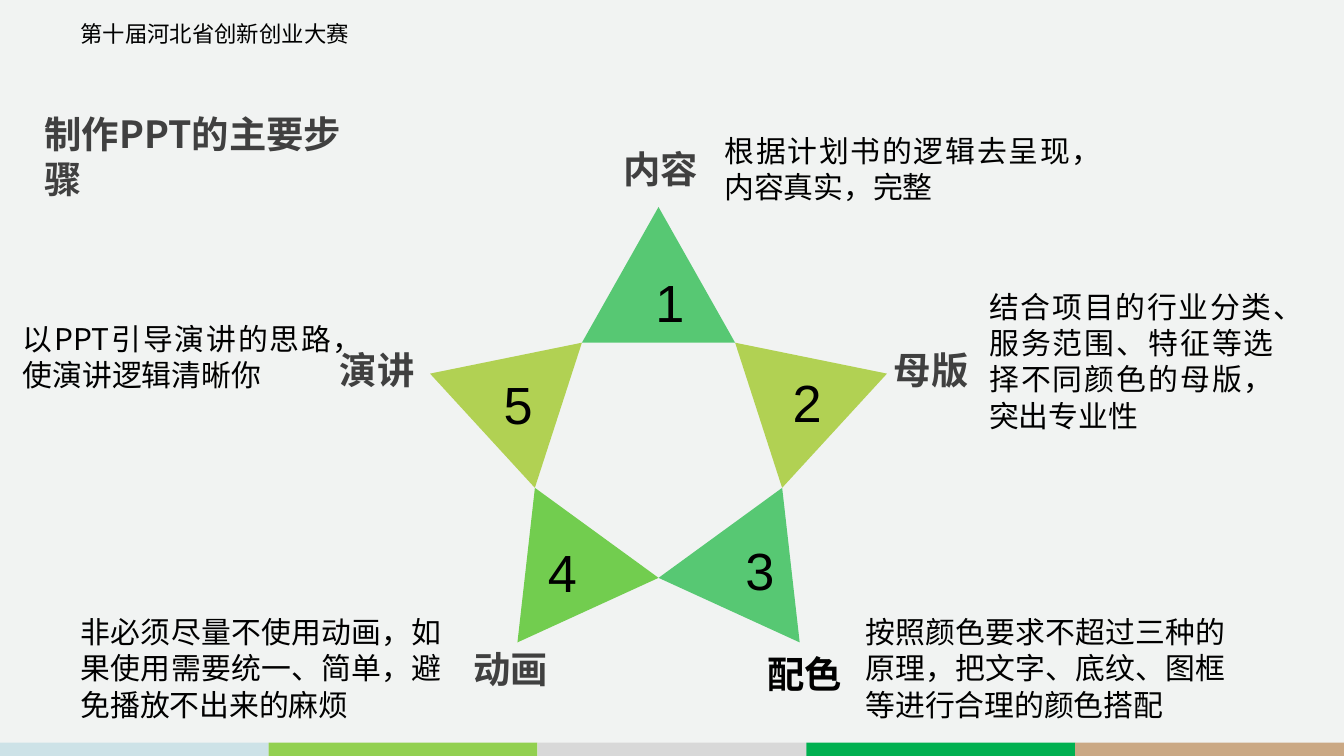
"""Build a slide on the five main steps of making a presentation, set around a star."""
from math import cos, pi, sin

from lxml import etree
from pptx import Presentation
from pptx.dml.color import RGBColor
from pptx.enum.shapes import MSO_SHAPE
from pptx.enum.text import MSO_ANCHOR, PP_ALIGN
from pptx.oxml.ns import qn
from pptx.util import Inches, Pt

RECT = MSO_SHAPE.RECTANGLE
TOP = MSO_ANCHOR.TOP
LEFT, CENTER, JUSTIFY = PP_ALIGN.LEFT, PP_ALIGN.CENTER, PP_ALIGN.JUSTIFY

BACKGROUND = RGBColor(0xF1, 0xF3, 0xF2)
BLACK = RGBColor(0, 0, 0)
GRAY = RGBColor(0x40, 0x40, 0x40)
TEAL = RGBColor(0x57, 0xC8, 0x73)
LIME = RGBColor(0xB1, 0xD1, 0x53)
GREEN = RGBColor(0x72, 0xCD, 0x4F)
BAR_COLORS = [
    RGBColor(0xCD, 0xE2, 0xE7),
    RGBColor(0x92, 0xD0, 0x50),
    RGBColor(0xD8, 0xD8, 0xD8),
    RGBColor(0x00, 0xB0, 0x50),
    RGBColor(0xCA, 0xA8, 0x84),
]
CJK = "Noto Sans CJK SC"

HEADER = "第十届河北省创新创业大赛"
TITLE = "制作PPT的主要步骤"
STEPS = [
    dict(color=TEAL, number=(4.6, 2, 0.77, 0.47),
         label="内容", label_box=(4.64, 1.08, 0.69, 0.34), label_color=GRAY,
         text="根据计划书的逻辑去呈现，内容真实，完整",
         text_box=(5.39, 0.98, 2.81, 0.54)),
    dict(color=LIME, number=(5.68, 2.75, 0.65, 0.47),
         label="母版", label_box=(6.65, 2.58, 0.65, 0.34), label_color=GRAY,
         text="结合项目的行业分类、服务范围、特征等选择不同颜色的母版，突出专业性",
         text_box=(7.36, 2.14, 2.12, 1.08)),
    dict(color=TEAL, number=(5.36, 4, 0.59, 0.47),
         label="配色", label_box=(5.71, 4.84, 0.77, 0.34), label_color=BLACK,
         text="按照颜色要求不超过三种的原理，把文字、底纹、图框等进行合理的颜色搭配",
         text_box=(6.44, 4.56, 2.68, 0.81)),
    dict(color=GREEN, number=(3.99, 4.01, 0.39, 0.47),
         label="动画", label_box=(3.52, 4.8, 0.66, 0.34), label_color=GRAY,
         text="非必须尽量不使用动画，如果使用需要统一、简单，避免播放不出来的麻烦",
         text_box=(0.6, 4.56, 2.69, 0.81)),
    dict(color=LIME, number=(3.66, 2.76, 0.39, 0.47),
         label="演讲", label_box=(2.53, 2.58, 0.63, 0.34), label_color=GRAY,
         text="以PPT引导演讲的思路，使演讲逻辑清晰你",
         text_box=(0.17, 2.38, 2.31, 0.54)),
]
WIDTH = 10
HEIGHT = WIDTH * 9 / 16
BAR_HEIGHT = 0.1
STAR_X, STAR_Y = 4.9, 3.33
TIP_RADIUS, INNER_RADIUS = 1.79, 0.97
LINE_HEIGHT = 1.22


def write(text, box, shape=None, size=16, color=BLACK, bold=False, font=CJK,
          align=LEFT, insets=(0, 0)):
    """Put formatted text in the given shape, or in a new text box."""
    lengths = [Inches(v) for v in box]
    sp = shape or s.shapes.add_textbox(*lengths)
    sp.left, sp.top, sp.width, sp.height = lengths
    tf = sp.text_frame
    tf.word_wrap = True
    tf.vertical_anchor = TOP
    tf.margin_left = tf.margin_right = Inches(insets[0])
    tf.margin_top = tf.margin_bottom = Inches(insets[1])
    p = tf.paragraphs[0]
    p.alignment = align
    p.space_before = Pt(0)
    p.line_spacing = Pt(round(size * LINE_HEIGHT, 1))
    r = p.add_run()
    r.text = text
    r.font.size = Pt(size)
    r.font.bold = bold
    r.font.color.rgb = color
    r.font.name = font
    ea = etree.SubElement(r.font._element, qn("a:ea"))
    ea.set("typeface", CJK)


def paint(sp, color):
    """Give a shape a flat fill with no line or shadow."""
    sp.shadow.inherit = False
    sp.fill.solid()
    sp.fill.fore_color.rgb = color
    sp.line.fill.background()


def star_point(radius, turn):
    """Return a point on a circle about the star, in fifths of a turn from the top."""
    angle = 2 * pi * turn / 5
    return (Inches(round(STAR_X + radius * sin(angle), 2)),
            Inches(round(STAR_Y - radius * cos(angle), 2)))


prs = Presentation()
prs.slide_width, prs.slide_height = Inches(WIDTH), Inches(HEIGHT)
s = prs.slides.add_slide(prs.slide_layouts[5])
s.background.fill.solid()
s.background.fill.fore_color.rgb = BACKGROUND

bar_width = WIDTH / len(BAR_COLORS)
for i, color in enumerate(BAR_COLORS):
    bar = s.shapes.add_shape(RECT, Inches(i * bar_width), Inches(HEIGHT - BAR_HEIGHT),
                             Inches(bar_width), Inches(BAR_HEIGHT))
    paint(bar, color)

write(HEADER, (0.5, 0.1, 5.56, 0.3), size=12, font="Calibri", insets=(0.1, 0.05))
write(TITLE, (0.23, 0.77, 2.68, 0.44), shape=s.shapes.title, size=20, color=GRAY,
      bold=True, insets=(0.1, 0.05))

for i, step in enumerate(STEPS):
    builder = s.shapes.build_freeform(*star_point(INNER_RADIUS, i - 0.5))
    builder.add_line_segments([star_point(TIP_RADIUS, i), star_point(INNER_RADIUS, i + 0.5)])
    paint(builder.convert_to_shape(), step["color"])

for i, step in enumerate(STEPS, 1):
    write(str(i), step["number"], size=28, font="Arial", align=CENTER)
    write(step["text"], step["text_box"], align=JUSTIFY)
    write(step["label"], step["label_box"], size=20, color=step["label_color"], bold=True)

prs.save("out.pptx")
